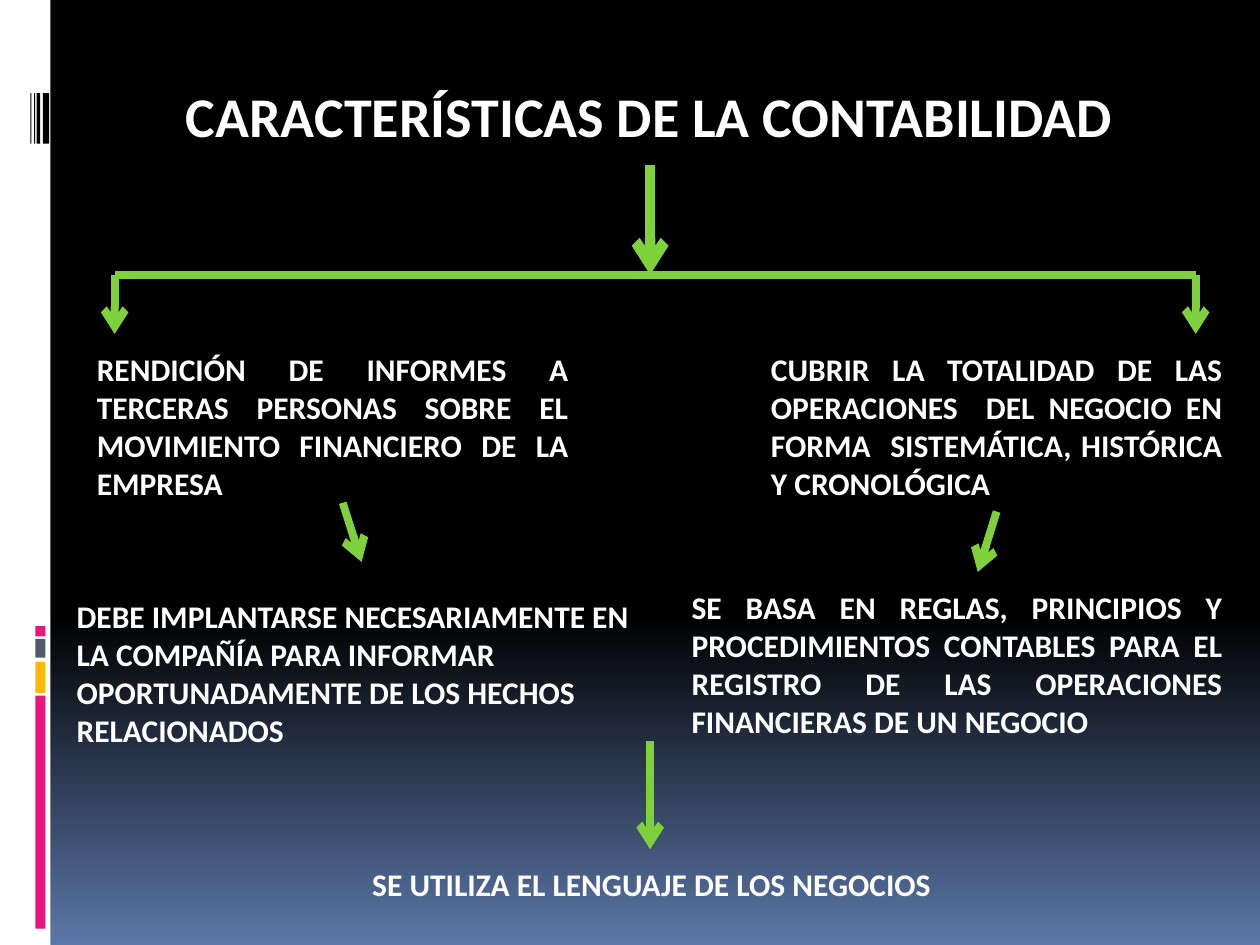
import dataclasses
import typing

import lxml.etree
import pptx
import pptx.dml.color
import pptx.enum.shapes
import pptx.enum.text
import pptx.oxml.ns
import pptx.util

# The slide is a grid of 100 columns by 75 rows of square cells.
CELL = 0.1
COLS, ROWS = 100, 75
FONT = "Calibri"
HEX = {
    "white": "FFFFFF",
    "black": "000000",
    "blue": "5B77A8",
    "pink": "EA157A",
    "gold": "FEB80A",
    "slate": "4E5B6F",
    "green": "7FD13B",
}
ALIGN = pptx.enum.text.PP_ALIGN


@dataclasses.dataclass
class Bar:
    col: float
    row: float
    wide: float
    high: float
    fill: str


@dataclasses.dataclass
class Note:
    col: float
    row: float
    wide: float
    high: float
    text: str
    align: ALIGN = ALIGN.JUSTIFY


@dataclasses.dataclass
class Line:
    start: typing.Tuple[float, float]
    end: typing.Tuple[float, float]
    width: float = 4.5
    arrow: bool = True


MID, LEFT, RIGHT, FORK = 51.6, 9.1, 94.9, 21.8

BARS = [Bar(0, 0, 4, ROWS, "white")]
BARS += [
    Bar(2.8, row, 0.8, high, fill)
    for row, high, fill in (
        (55.2, 18.5, "pink"),
        (52.5, 2.5, "gold"),
        (50.7, 1.5, "slate"),
        (49.7, 0.8, "pink"),
    )
]
BARS += [
    Bar(col, 7.4, wide, 4, "black")
    for col, wide in ((3.4, 0.5), (2.9, 0.3), (2.7, 0.1), (2.4, 0.1))
]

NOTES = [
    Note(6.7, 27.3, 39.4, 13.1,
         "RENDICIÓN DE INFORMES A TERCERAS PERSONAS SOBRE EL MOVIMIENTO "
         "FINANCIERO DE LA EMPRESA"),
    Note(60.2, 27.3, 37.8, 13.1,
         "CUBRIR LA TOTALIDAD DE LAS OPERACIONES  DEL NEGOCIO EN FORMA  "
         "SISTEMÁTICA, HISTÓRICA Y CRONOLÓGICA "),
    Note(5.1, 46.9, 48, 13.1,
         "DEBE IMPLANTARSE NECESARIAMENTE EN LA COMPAÑÍA PARA INFORMAR "
         "OPORTUNADAMENTE DE LOS HECHOS RELACIONADOS", ALIGN.LEFT),
    Note(53.9, 46.2, 44.1, 13.1,
         "SE BASA EN REGLAS, PRINCIPIOS Y PROCEDIMIENTOS CONTABLES PARA EL "
         "REGISTRO DE LAS OPERACIONES FINANCIERAS DE UN NEGOCIO "),
    Note(15.4, 68.2, 73.2, 4,
         "SE UTILIZA EL LENGUAJE DE LOS NEGOCIOS ", ALIGN.CENTER),
]

LINES = [
    Line((MID, 13.1), (MID, FORK), width=6),
    Line((LEFT, FORK), (RIGHT, FORK), arrow=False),
    Line((LEFT, FORK), (LEFT, 26.5)),
    Line((RIGHT, FORK), (RIGHT, 26.5)),
    Line((27.2, 39.9), (28.7, 44.6)),
    Line((79.1, 40.6), (77.6, 45.4)),
    Line((MID, 58.8), (MID, 67.4)),
]


def cells(*counts: float) -> typing.List[int]:
    return [pptx.util.Inches(count * CELL) for count in counts]


def color(name: str) -> pptx.dml.color.RGBColor:
    return pptx.dml.color.RGBColor.from_string(HEX[name])


def style(para, size: float, align: ALIGN) -> None:
    para.alignment = align
    para.font.name = FONT
    para.font.size = pptx.util.Pt(size)
    para.font.bold = True
    para.font.color.rgb = color("white")


def shade(slide) -> None:
    """Fill the background with black that fades to blue at the foot."""
    fill = slide.background.fill
    fill.gradient()
    fill.gradient_angle = 270
    for stop, (place, name) in zip(
            fill.gradient_stops, ((0.65, "black"), (1, "blue"))):
        stop.position = place
        stop.color.rgb = color(name)


def draw_bar(slide, bar: Bar) -> None:
    shape = slide.shapes.add_shape(
        pptx.enum.shapes.MSO_SHAPE.RECTANGLE,
        *cells(bar.col, bar.row, bar.wide, bar.high))
    shape.shadow.inherit = False
    shape.fill.solid()
    shape.fill.fore_color.rgb = color(bar.fill)
    shape.line.fill.background()


def draw_title(slide, text: str) -> None:
    title = slide.shapes.title
    title.left, title.top, title.width, title.height = cells(7.5, 6, 87.4, 7.1)
    frame = title.text_frame
    frame.text = text
    frame.vertical_anchor = pptx.enum.text.MSO_ANCHOR.TOP
    para = frame.paragraphs[0]
    left, indent = cells(4.5, -3.8)
    props = para._p.get_or_add_pPr()
    props.set("marL", str(left))
    props.set("indent", str(indent))
    style(para, 32, ALIGN.CENTER)


def draw_note(slide, note: Note) -> None:
    box = slide.shapes.add_textbox(
        *cells(note.col, note.row, note.wide, note.high))
    frame = box.text_frame
    frame.word_wrap = True
    frame.auto_size = pptx.enum.text.MSO_AUTO_SIZE.SHAPE_TO_FIT_TEXT
    frame.text = note.text
    style(frame.paragraphs[0], 18, note.align)


def draw_line(slide, line: Line) -> None:
    link = slide.shapes.add_connector(
        pptx.enum.shapes.MSO_CONNECTOR.STRAIGHT,
        *cells(*line.start, *line.end))
    link.line.color.rgb = color("green")
    link.line.width = pptx.util.Pt(line.width)
    name = pptx.oxml.ns.qn
    if line.arrow:
        lxml.etree.SubElement(
            link.line._get_or_add_ln(), name("a:tailEnd"), type="arrow")
    lxml.etree.SubElement(link._element.spPr, name("a:effectLst"))


def main() -> None:
    deck = pptx.Presentation()
    deck.slide_width, deck.slide_height = cells(COLS, ROWS)
    slide = deck.slides.add_slide(deck.slide_layouts.get_by_name("Title Only"))
    shade(slide)
    for bar in BARS:
        draw_bar(slide, bar)
    draw_title(slide, "CARACTERÍSTICAS DE LA CONTABILIDAD")
    for note in NOTES:
        draw_note(slide, note)
    for line in LINES:
        draw_line(slide, line)
    deck.save("out.pptx")


if __name__ == "__main__":
    main()
